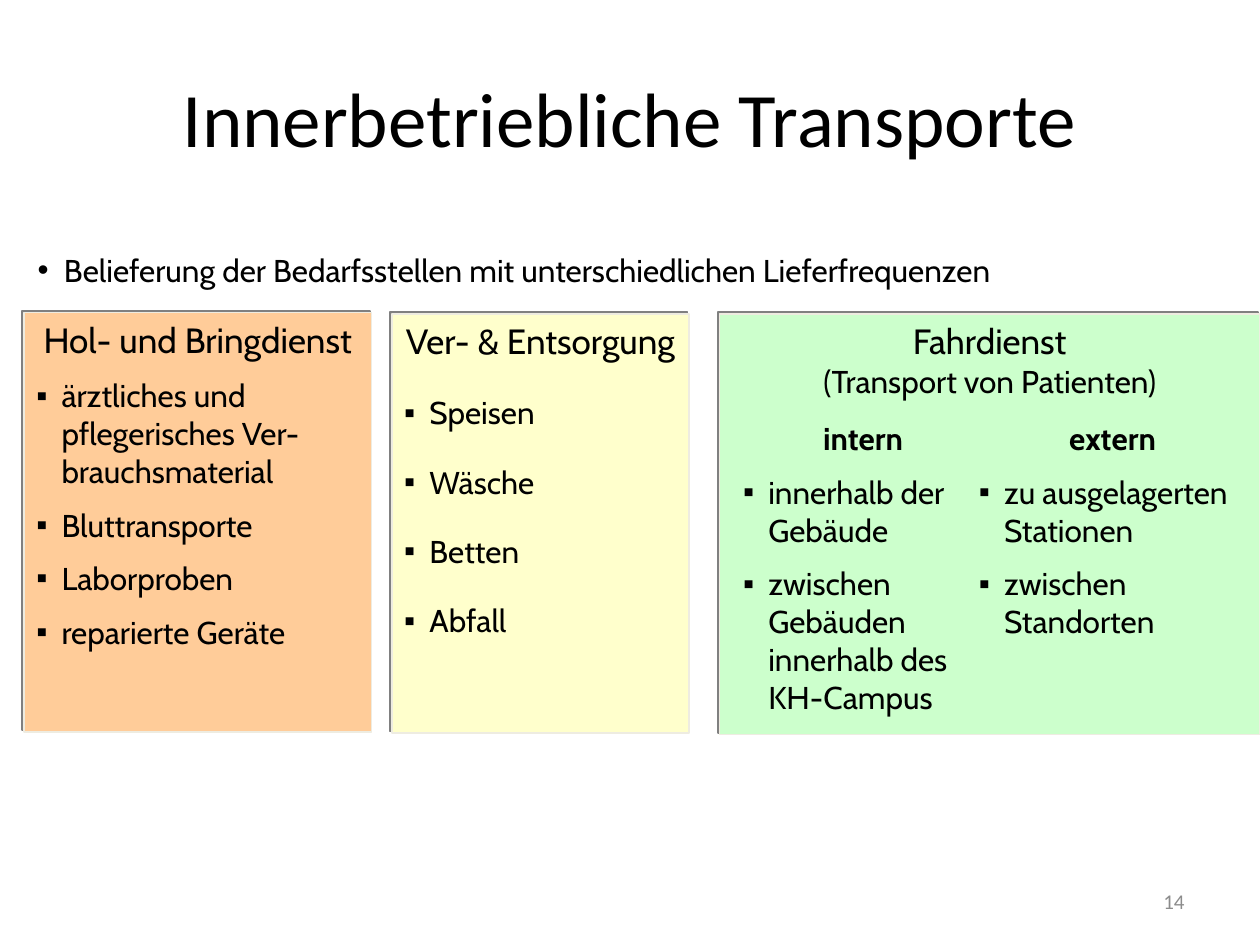
"""Build the slide on in-house hospital transports."""
from lxml.etree import SubElement
from pptx import Presentation
from pptx.dml.color import RGBColor
from pptx.enum.shapes import MSO_SHAPE
from pptx.enum.text import MSO_ANCHOR as Anchor, PP_ALIGN as Align
from pptx.oxml.ns import qn
from pptx.util import Inches, Pt

BLACK = RGBColor(0x00, 0x00, 0x00)
GREY = RGBColor(0x8C, 0x8C, 0x8C)
EDGE = RGBColor(0xEE, 0xEC, 0xE1)
ORANGE = RGBColor(0xFF, 0xCC, 0x99)
YELLOW = RGBColor(0xFF, 0xFF, 0xCC)
GREEN = RGBColor(0xCC, 0xFF, 0xCC)
SHADOW = "808080"

TITLE = "Innerbetriebliche Transporte"
INTRO = "Belieferung der Bedarfsstellen mit unterschiedlichen Lieferfrequenzen"
PAGE_NUMBER = "14"

SERVICES = [
    {"area": (0.19, 2.48, 2.76, 3.33), "fill": ORANGE, "gap": 9,
     "heading": "Hol- und Bringdienst",
     "items": ["ärztliches und \npflegerisches Ver-brauchsmaterial",
               "Bluttransporte", "Laborproben", "reparierte Geräte"]},
    {"area": (3.11, 2.49, 2.36, 3.33), "fill": YELLOW, "gap": 18,
     "heading": "Ver- & Entsorgung",
     "items": ["Speisen", "Wäsche", "Betten", "Abfall"]},
    {"area": (5.71, 2.49, 4.29, 3.34), "fill": GREEN, "gap": 9,
     "heading": "Fahrdienst", "subtitle": "(Transport von Patienten)"},
]
RIDES = [
    {"area": (5.8, 3.28, 2.1, 2.51), "heading": "intern",
     "items": ["innerhalb der Gebäude",
               "zwischen\nGebäuden\ninnerhalb des KH-Campus"]},
    {"area": (7.67, 3.28, 2.32, 2.2), "heading": "extern",
     "items": ["zu ausgelagerten\nStationen", "zwischen Standorten"]},
]


def write(box, text, size=18, font="Cabin", color=BLACK, bold=False,
          align=Align.LEFT, before=0, bullet=None, indent=0.2):
    """Append a formatted paragraph to a box, using the empty first one."""
    frame = box.text_frame
    para = frame.add_paragraph() if frame.text else frame.paragraphs[0]
    para.text = text
    para.alignment = align
    para.space_before = Pt(before)
    for span in para.runs:
        span.font.name = font
        span.font.size = Pt(size)
        span.font.bold = bold
        span.font.color.rgb = color
    if bullet:
        props = para._p.get_or_add_pPr()
        props.set("marL", str(Inches(indent)))
        props.set("indent", str(-Inches(indent)))
        SubElement(props, qn("a:buFont"), typeface="Arial")
        SubElement(props, qn("a:buChar"), char=bullet)


def add_text_box(page, area, anchor=Anchor.TOP):
    """Add a wrapping text box."""
    box = page.shapes.add_textbox(*map(Inches, area))
    box.text_frame.word_wrap = True
    box.text_frame.vertical_anchor = anchor
    return box


def add_panel(page, area, fill):
    """Add a filled rectangle without line or shadow."""
    panel = page.shapes.add_shape(MSO_SHAPE.RECTANGLE, *map(Inches, area))
    panel.shadow.inherit = False
    panel.fill.solid()
    panel.fill.fore_color.rgb = fill
    panel.line.fill.background()
    panel.text_frame.word_wrap = True
    panel.text_frame.vertical_anchor = Anchor.TOP
    return panel


def add_edge(panel):
    """Give a panel a light line and a hard shadow to the upper left."""
    panel.line.color.rgb = EDGE
    panel.line.width = Pt(1)
    effects = panel._element.spPr.find(qn("a:effectLst"))
    shadow = SubElement(effects, qn("a:outerShdw"), dist=str(Pt(1.4)),
                        dir=str(225 * 60000), algn="ctr", rotWithShape="0")
    SubElement(shadow, qn("a:srgbClr"), val=SHADOW)


def main():
    """Lay out the slide and save it."""
    deck = Presentation()
    deck.slide_width, deck.slide_height = Inches(10), Inches(7.5)
    page = deck.slides.add_slide(deck.slide_layouts[6])

    write(add_text_box(page, (0.5, 0.3, 9, 1.25), Anchor.MIDDLE), TITLE,
          size=44, font="Calibri", align=Align.CENTER)
    write(add_text_box(page, (0.2, 1.94, 10.53, 0.4)), INTRO,
          bullet="•", indent=0.21)

    for service in SERVICES:
        panel = add_panel(page, service["area"], service["fill"])
        add_edge(panel)
        write(panel, service["heading"], size=20, align=Align.CENTER)
        if "subtitle" in service:
            write(panel, service["subtitle"], align=Align.CENTER)
        for item in service.get("items", []):
            write(panel, item, before=service["gap"], bullet="▪")

    for ride in RIDES:
        panel = add_panel(page, ride["area"], GREEN)
        write(panel, ride["heading"], bold=True, align=Align.CENTER)
        for item in ride["items"]:
            write(panel, item, before=9, bullet="▪")

    write(add_text_box(page, (7.17, 6.95, 2.33, 0.4), Anchor.MIDDLE),
          PAGE_NUMBER, size=12, font="Calibri", color=GREY, align=Align.RIGHT)
    deck.save("out.pptx")


if __name__ == "__main__":
    main()
